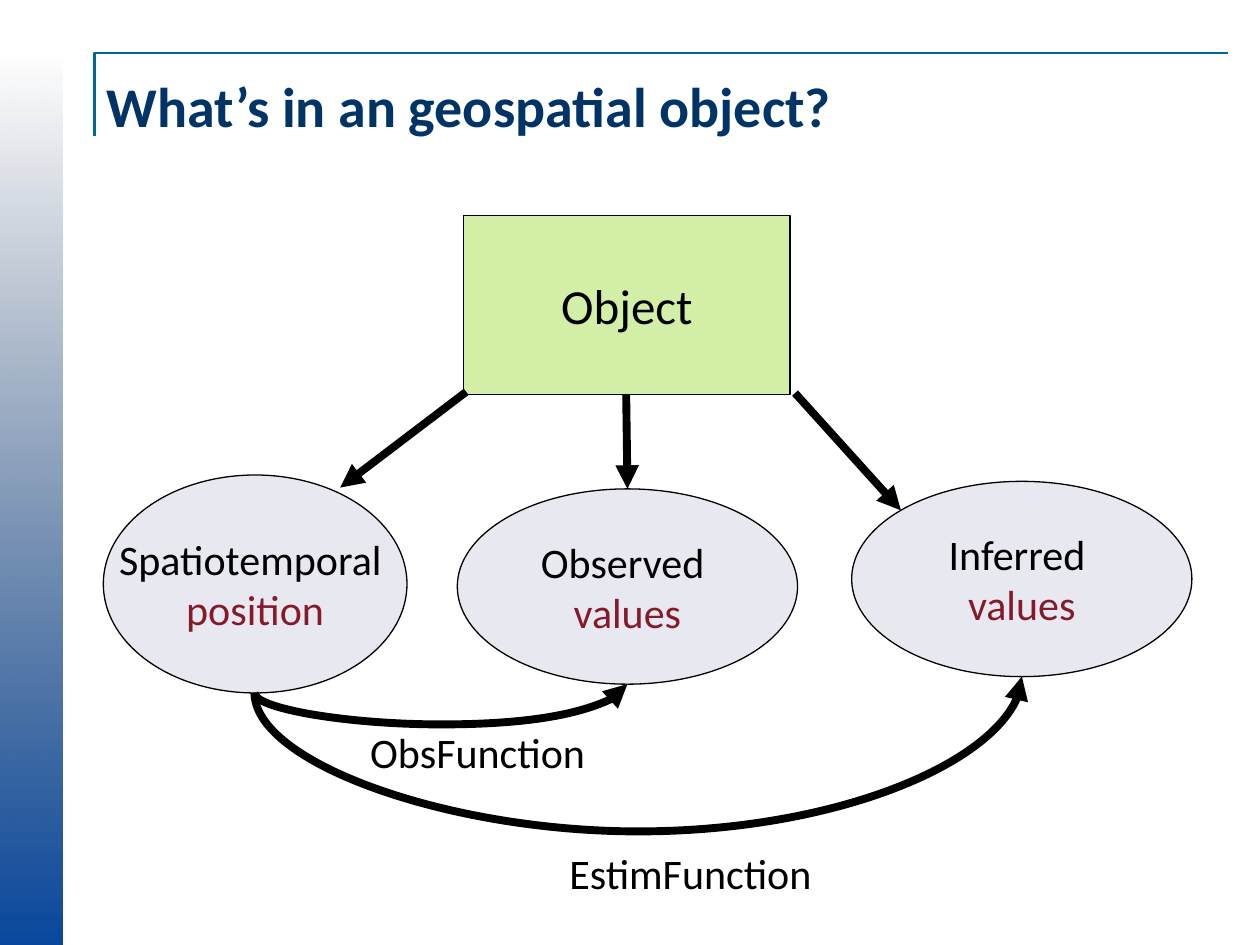
from dataclasses import dataclass

from lxml import etree
from pptx import Presentation
from pptx import util as u
from pptx.dml.color import RGBColor
from pptx.enum import shapes, text
from pptx.oxml import ns


@dataclass(frozen=True)
class Theme:
    font: str = "Calibri"
    title: str = "003366"
    ink: str = "000000"
    accent: str = "851B2A"
    object_fill: str = "D3EFA7"
    part_fill: str = "E8E8F1"
    frame: str = "006699"
    band_top: str = "042148"
    band_bottom: str = "08479C"
    title_size: int = 32
    object_size: int = 28
    label_size: int = 24
    outline: float = 0.75
    frame_line: float = 1.5
    arrow_line: float = 4.5


THEME = Theme()


def rgb(value):
    return RGBColor.from_string(value)


def inches(*values):
    return [u.Inches(v) for v in values]


def sub(parent, tag, **attrs):
    return etree.SubElement(parent, ns.qn(tag), **attrs)


def set_line(line, color, width):
    line.color.rgb = rgb(color)
    line.width = u.Pt(width)


def write(tf, lines, size, align=None, bold=False, wrap=False):
    tf.word_wrap = wrap
    for i, (words, color) in enumerate(lines):
        p = tf.paragraphs[0] if i == 0 else tf.add_paragraph()
        p.alignment = align
        p.font.name = THEME.font
        p.font.size = u.Pt(size)
        p.font.bold = bold
        p.font.color.rgb = rgb(color)
        p.add_run().text = words


def add_band(s):
    sp = s.shapes.add_shape(shapes.MSO_SHAPE.RECTANGLE, *inches(0, 0.42, 0.5, 7.08))
    sp.shadow.inherit = False
    sp.line.fill.background()
    sp.fill.gradient()
    sp.fill.gradient_angle = 270
    top, bottom = sp.fill.gradient_stops
    top.color.rgb = rgb(THEME.band_top)
    bottom.color.rgb = rgb(THEME.band_bottom)
    color = sp._element.spPr.find(".//" + ns.qn("a:srgbClr"))
    sub(color, "a:alpha", val="0")


def add_frame(s):
    builder = s.shapes.build_freeform(*inches(0.75, 1.08))
    builder.add_line_segments([inches(0.75, 0.42), inches(9.75, 0.42)], close=False)
    sp = builder.convert_to_shape()
    sp.shadow.inherit = False
    sp.fill.background()
    set_line(sp.line, THEME.frame, THEME.frame_line)


def add_node(s, kind, box, fill, lines, size):
    sp = s.shapes.add_shape(kind, *inches(*box))
    sp.shadow.inherit = False
    sp.fill.solid()
    sp.fill.fore_color.rgb = rgb(fill)
    set_line(sp.line, THEME.ink, THEME.outline)
    sp.text_frame.vertical_anchor = text.MSO_ANCHOR.MIDDLE
    write(sp.text_frame, lines, size, text.PP_ALIGN.CENTER)


def add_title(s, words):
    sp = s.shapes.add_textbox(*inches(0.75, 0.42, 8.92, 0.83))
    sp.text_frame.vertical_anchor = text.MSO_ANCHOR.MIDDLE
    write(sp.text_frame, [(words, THEME.title)], THEME.title_size, bold=True, wrap=True)


def add_label(s, box, words):
    sp = s.shapes.add_textbox(*inches(*box))
    sp.text_frame.auto_size = text.MSO_AUTO_SIZE.SHAPE_TO_FIT_TEXT
    write(sp.text_frame, [(words, THEME.ink)], THEME.label_size)


def add_arrow(s, start, end, kind=shapes.MSO_CONNECTOR.STRAIGHT):
    c = s.shapes.add_connector(kind, *inches(*start, *end))
    set_line(c.line, THEME.ink, THEME.arrow_line)
    sub(c.line._get_or_add_ln(), "a:tailEnd", type="triangle")
    sub(c._element.spPr, "a:effectLst")
    return c


def add_sagging_arrow(s, start, end, sag):
    (x1, y1), (x2, y2) = start, end
    span, rise = x2 - x1, y1 - y2
    mid_x, mid_y = (x1 + x2) / 2, (y1 + y2) / 2
    left, top = mid_x - rise / 2, mid_y - span / 2
    c = add_arrow(s, (left, top), (left + rise, top + span), shapes.MSO_CONNECTOR.CURVE)
    spPr = c._element.spPr
    xfrm = spPr.find(ns.qn("a:xfrm"))
    for name, value in (("rot", "5400000"), ("flipH", "1"), ("flipV", "1")):
        xfrm.set(name, value)
    guides = spPr.find(ns.qn("a:prstGeom")).get_or_add_avLst()
    sub(guides, "a:gd", name="adj1", fmla=f"val {round(-sag / rise * 100000)}")


def main():
    prs = Presentation()
    prs.slide_width, prs.slide_height = inches(10, 7.5)
    s = prs.slides.add_slide(prs.slide_layouts[6])

    add_band(s)
    add_frame(s)
    add_title(s, "What’s in an geospatial object?")

    add_node(s, shapes.MSO_SHAPE.RECTANGLE, (3.68, 1.71, 2.59, 1.42),
             THEME.object_fill, [("Object", THEME.ink)], THEME.object_size)
    parts = [
        ((0.82, 3.77, 2.41, 1.73), "Spatiotemporal ", "position"),
        ((3.63, 3.88, 2.7, 1.55), "Observed ", "values"),
        ((6.76, 3.82, 2.7, 1.55), "Inferred ", "values"),
    ]
    for box, first, second in parts:
        add_node(s, shapes.MSO_SHAPE.OVAL, box, THEME.part_fill,
                 [(first, THEME.ink), (second, THEME.accent)], THEME.label_size)

    for start, end in [
        ((3.7, 3.11), (2.7, 3.87)),
        ((4.97, 3.13), (4.98, 3.88)),
        ((6.31, 3.12), (7.15, 4.05)),
    ]:
        add_arrow(s, start, end)

    position = (2.02, 5.5)
    add_sagging_arrow(s, position, (4.98, 5.43), 0.25)
    add_sagging_arrow(s, position, (8.11, 5.37), 1.1)
    add_label(s, (2.84, 5.72, 1.93, 0.51), "ObsFunction")
    add_label(s, (4.42, 6.68, 2.15, 0.51), "EstimFunction")

    prs.save("out.pptx")


if __name__ == "__main__":
    main()
